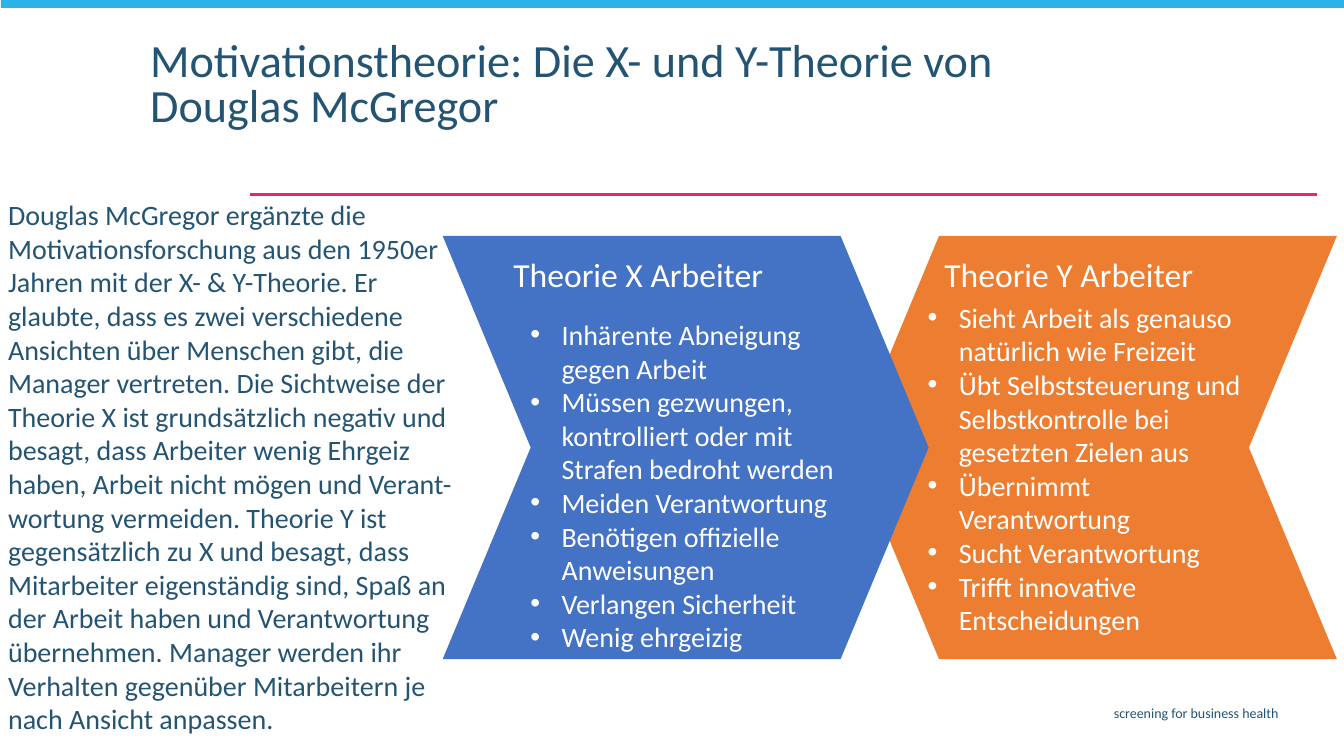
from dataclasses import dataclass

from lxml.etree import SubElement
from pptx import Presentation
from pptx.dml.color import RGBColor
from pptx.enum.shapes import MSO_CONNECTOR, MSO_SHAPE
from pptx.enum.text import MSO_AUTO_SIZE, PP_ALIGN
from pptx.oxml.ns import qn
from pptx.shapes.autoshape import Shape
from pptx.slide import Slide
from pptx.util import Inches, Pt


@dataclass(frozen=True)
class Theme:
    font: str = "Calibri"
    navy: str = "245473"
    white: str = "FFFFFF"
    cyan: str = "29B3E8"
    pink: str = "EC2179"
    blue: str = "4472C4"
    orange: str = "ED7D31"
    title_size: int = 33
    heading_size: int = 24
    body_size: int = 20
    footer_size: int = 10
    rule_width: float = 1.5


THEME = Theme()


@dataclass(frozen=True)
class Box:
    left: float
    top: float
    width: float
    height: float

    def lengths(self) -> tuple[int, int, int, int]:
        return (Inches(self.left), Inches(self.top),
                Inches(self.width), Inches(self.height))


@dataclass(frozen=True)
class TextBlock:
    box: Box
    paragraphs: tuple[str, ...]
    size: int
    color: str = THEME.navy
    inset: float = 0.05
    alignment: PP_ALIGN = PP_ALIGN.LEFT
    bulleted: bool = False
    line_spacing: float = 1.0
    grows: bool = True


@dataclass(frozen=True)
class Theory:
    chevron: Box
    color: str
    rotation: int
    heading: str
    heading_box: Box
    points_box: Box
    points: tuple[str, ...]


THEORIES = (
    Theory(
        Box(8.44, 2.34, 4.82, 4.2), THEME.orange, 180,
        "Theorie Y Arbeiter", Box(9.07, 2.47, 3.06, 0.43),
        Box(9.15, 2.93, 3.4, 3.47),
        (
            "Sieht Arbeit als genauso natürlich wie Freizeit",
            "Übt Selbststeuerung und Selbstkontrolle bei gesetzten Zielen aus",
            "Übernimmt Verantwortung",
            "Sucht Verantwortung",
            "Trifft innovative Entscheidungen",
        ),
    ),
    Theory(
        Box(4.39, 2.34, 4.82, 4.2), THEME.blue, 0,
        "Theorie X Arbeiter", Box(4.94, 2.47, 2.78, 0.43),
        Box(5.21, 3.1, 3.4, 3.47),
        (
            "Inhärente Abneigung gegen Arbeit",
            "Müssen gezwungen, kontrolliert oder mit Strafen bedroht werden",
            "Meiden Verantwortung",
            "Benötigen offizielle Anweisungen",
            "Verlangen Sicherheit",
            "Wenig ehrgeizig",
        ),
    ),
)

TITLE = TextBlock(
    Box(1.39, 0.36, 9.68, 0.76),
    ("Motivationstheorie: Die X- und Y-Theorie von Douglas McGregor",),
    THEME.title_size, inset=0.1, line_spacing=0.81, grows=False,
)
INTRODUCTION = TextBlock(
    Box(0.04, 1.92, 4.64, 5.48),
    (
        "Douglas McGregor ergänzte die Motivationsforschung aus den 1950er "
        "Jahren mit der X- & Y-Theorie. Er glaubte, dass es zwei verschiedene "
        "Ansichten über Menschen gibt, die Manager vertreten. Die Sichtweise "
        "der Theorie X ist grundsätzlich negativ und besagt, dass Arbeiter "
        "wenig Ehrgeiz haben, Arbeit nicht mögen und Verant-wortung vermeiden. "
        "Theorie Y ist gegensätzlich zu X und besagt, dass Mitarbeiter "
        "eigenständig sind, Spaß an der Arbeit haben und Verantwortung "
        "übernehmen. Manager werden ihr Verhalten gegenüber Mitarbeitern je "
        "nach Ansicht anpassen.",
    ),
    THEME.body_size, inset=0.04,
)
FOOTER = TextBlock(
    Box(3.7, 6.94, 9.03, 0.25), ("screening for business health",),
    THEME.footer_size, alignment=PP_ALIGN.RIGHT,
)


def add_filled_shape(slide: Slide, kind: MSO_SHAPE, box: Box, color: str) -> Shape:
    shape = slide.shapes.add_shape(kind, *box.lengths())
    shape.shadow.inherit = False
    shape.fill.solid()
    shape.fill.fore_color.rgb = RGBColor.from_string(color)
    shape.line.fill.background()
    return shape


def add_text(slide: Slide, block: TextBlock) -> None:
    frame = slide.shapes.add_textbox(*block.box.lengths()).text_frame
    frame.word_wrap = True
    frame.auto_size = (MSO_AUTO_SIZE.SHAPE_TO_FIT_TEXT if block.grows
                       else MSO_AUTO_SIZE.NONE)
    frame.margin_left = frame.margin_right = Inches(block.inset)
    frame.margin_top = frame.margin_bottom = Inches(min(block.inset, 0.05))
    for index, text in enumerate(block.paragraphs):
        paragraph = frame.add_paragraph() if index else frame.paragraphs[0]
        paragraph.alignment = block.alignment
        paragraph.line_spacing = block.line_spacing
        if block.bulleted:
            properties = paragraph._p.get_or_add_pPr()
            properties.set("marL", str(Inches(0.31)))
            properties.set("indent", str(Inches(-0.31)))
            SubElement(properties, qn("a:buFont")).set("typeface", "Arial")
            SubElement(properties, qn("a:buChar")).set("char", "•")
        run = paragraph.add_run()
        run.text = text
        run.font.name = THEME.font
        run.font.size = Pt(block.size)
        run.font.color.rgb = RGBColor.from_string(block.color)


def add_rule(slide: Slide) -> None:
    rule = slide.shapes.add_connector(
        MSO_CONNECTOR.STRAIGHT,
        Inches(13.06), Inches(1.93), Inches(2.48), Inches(1.93))
    rule.line.color.rgb = RGBColor.from_string(THEME.pink)
    rule.line.width = Pt(THEME.rule_width)
    SubElement(rule._element.spPr, qn("a:effectLst"))


def add_chevron(slide: Slide, theory: Theory) -> None:
    chevron = add_filled_shape(slide, MSO_SHAPE.CHEVRON, theory.chevron, theory.color)
    chevron.adjustments[0] = 0.208
    chevron.rotation = theory.rotation


def add_theory_text(slide: Slide, theory: Theory) -> None:
    add_text(slide, TextBlock(theory.heading_box, (theory.heading,),
                              THEME.heading_size, THEME.white,
                              alignment=PP_ALIGN.CENTER))
    add_text(slide, TextBlock(theory.points_box, theory.points,
                              THEME.body_size, THEME.white, bulleted=True))


def main() -> None:
    presentation = Presentation()
    presentation.slide_width = Inches(13.33)
    presentation.slide_height = Inches(7.5)
    slide = presentation.slides.add_slide(presentation.slide_layouts[6])
    add_rule(slide)
    add_filled_shape(slide, MSO_SHAPE.RECTANGLE,
                     Box(0.01, -0.02, 13.34, 0.1), THEME.cyan)
    add_text(slide, FOOTER)
    add_text(slide, INTRODUCTION)
    for theory in THEORIES:
        add_chevron(slide, theory)
    for theory in THEORIES:
        add_theory_text(slide, theory)
    add_text(slide, TITLE)
    presentation.save("out.pptx")


if __name__ == "__main__":
    main()
